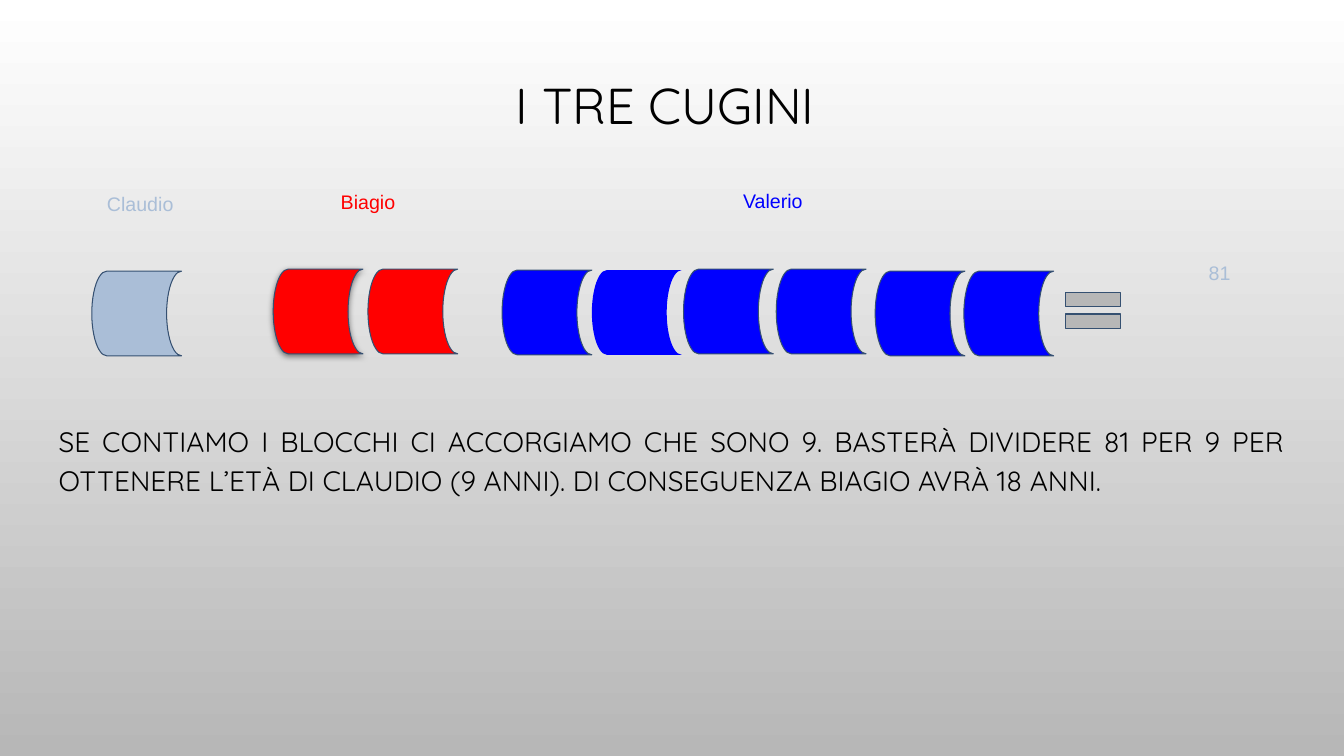
import pptx
import pptx.util
import pptx.dml.color
import pptx.enum.shapes
import pptx.enum.text
import pptx.oxml
from lxml import etree

TITLE = ("I TRE CUGINI", (2.9, 8.67, 93.17, 11.2))
BODY = (
    "SE CONTIAMO I BLOCCHI CI ACCORGIAMO CHE SONO 9. BASTERÀ DIVIDERE 81 PER 9 PER "
    "OTTENERE L’ETÀ DI CLAUDIO (9 ANNI). DI CONSEGUENZA BIAGIO AVRÀ 18 ANNI.",
    (3.38, 53.73, 93.17, 16),
)
BLOCK_SIZE = (6.68, 11.2)
COUSINS = [
    {"name": "Claudio", "color": "claudio", "label": (3.83, 24.67, 13.2, 4.4),
     "blocks": [(6.83, 35.87)]},
    {"name": "Biagio", "color": "biagio", "label": (20.11, 24.53, 14.55, 6.27),
     "blocks": [(20.33, 35.6), (27.38, 35.6)]},
    {"name": "Valerio", "color": "valerio", "label": (47.79, 24.4, 19.43, 6.27),
     "blocks": [(37.36, 35.73), (44.04, 35.73), (50.86, 35.6),
                (57.76, 35.6), (65.12, 35.87), (71.72, 35.87)]},
]
UNLINED = ("Valerio", 1)
SHADOWED = ("Biagio", 0)
EQUALS = ((78.54, 37.07, 5.55, 8), (0.235, 0.118))
TOTAL = ("81", (84.85, 33.87, 11.78, 15.07))

THEME = {
    "text": "000000", "top": "FFFFFF", "bottom": "B7B7B7", "line": "355071",
    "claudio": "AABED7", "biagio": "FF0000", "valerio": "0000FF",
    "title_size": 36, "body_size": 20, "label_size": 14,
    "heading_font": "Quicksand", "label_font": "Arial",
    "line_width": 0.75, "inset": 0.13,
}
SHADOW = (
    '<a:outerShdw xmlns:a="http://schemas.openxmlformats.org/drawingml/2006/main" '
    'blurRad="57150" dist="19050" dir="5400000" algn="bl" rotWithShape="0">'
    '<a:srgbClr val="000000"><a:alpha val="50000"/></a:srgbClr></a:outerShdw>'
)
ALIGN = pptx.enum.text.PP_ALIGN
ANCHOR = pptx.enum.text.MSO_ANCHOR
SHAPE = pptx.enum.shapes.MSO_SHAPE

deck = pptx.Presentation()
deck.slide_width = pptx.util.Inches(13.33)
deck.slide_height = pptx.util.Inches(7.5)
page = deck.slides.add_slide(deck.slide_layouts[1])


def color(name):
    return pptx.dml.color.RGBColor.from_string(THEME[name])


def place(percent):
    sides = (deck.slide_width, deck.slide_height) * 2
    return [round(side * share / 100) for side, share in zip(sides, percent)]


def write(box, text, size, font, ink, align, spacing=1.0):
    frame = box.text_frame
    frame.word_wrap = True
    frame.auto_size = pptx.enum.text.MSO_AUTO_SIZE.NONE
    para = frame.paragraphs[0]
    para.alignment = align
    para.line_spacing = spacing
    para.space_before = pptx.util.Pt(0)
    span = para.add_run()
    span.text = text
    span.font.size = pptx.util.Pt(THEME[size])
    span.font.name = THEME[font]
    span.font.color.rgb = color(ink)
    return para


def fill_placeholder(box, content, size, align, spacing, anchor):
    text, area = content
    box.left, box.top, box.width, box.height = place(area)
    frame = box.text_frame
    inset = pptx.util.Inches(THEME["inset"])
    frame.margin_left = frame.margin_right = inset
    frame.margin_top = frame.margin_bottom = inset
    frame.vertical_anchor = anchor
    return write(box, text, size, "heading_font", "text", align, spacing)


def add_label(text, area, ink):
    box = page.shapes.add_textbox(*place(area))
    write(box, text, "label_size", "label_font", ink, ALIGN.CENTER)


def add_figure(kind, area, ink, lined=True):
    figure = page.shapes.add_shape(kind, *place(area))
    figure.shadow.inherit = False
    figure.fill.solid()
    figure.fill.fore_color.rgb = color(ink)
    if lined:
        figure.line.color.rgb = color("line")
        figure.line.width = pptx.util.Pt(THEME["line_width"])
    else:
        figure.line.fill.background()
    return figure


backdrop = page.background.fill
backdrop.gradient()
backdrop.gradient_angle = 270
for stop, shade in zip(backdrop.gradient_stops, ("top", "bottom")):
    stop.color.rgb = color(shade)

fill_placeholder(page.shapes.title, TITLE, "title_size", ALIGN.CENTER, 0.9, ANCHOR.MIDDLE)
answer = fill_placeholder(page.placeholders[1], BODY, "body_size", ALIGN.JUSTIFY, 1.15, ANCHOR.TOP)
properties = answer._p.get_or_add_pPr()
properties.set("marL", "0")
properties.set("indent", "0")
properties.append(pptx.oxml.parse_xml(
    '<a:buNone xmlns:a="http://schemas.openxmlformats.org/drawingml/2006/main"/>'))

for cousin in COUSINS:
    for index, corner in enumerate(cousin["blocks"]):
        key = (cousin["name"], index)
        block = add_figure(SHAPE.FLOWCHART_STORED_DATA, corner + BLOCK_SIZE,
                           cousin["color"], key != UNLINED)
        if key == SHADOWED:
            effects = block._element.spPr.find(pptx.oxml.ns.qn("a:effectLst"))
            effects.append(etree.fromstring(SHADOW))
    add_label(cousin["name"], cousin["label"], cousin["color"])

equals = add_figure(SHAPE.MATH_EQUAL, EQUALS[0], "bottom")
for index, value in enumerate(EQUALS[1]):
    equals.adjustments[index] = value
add_label(*TOTAL, "claudio")

deck.save("out.pptx")
